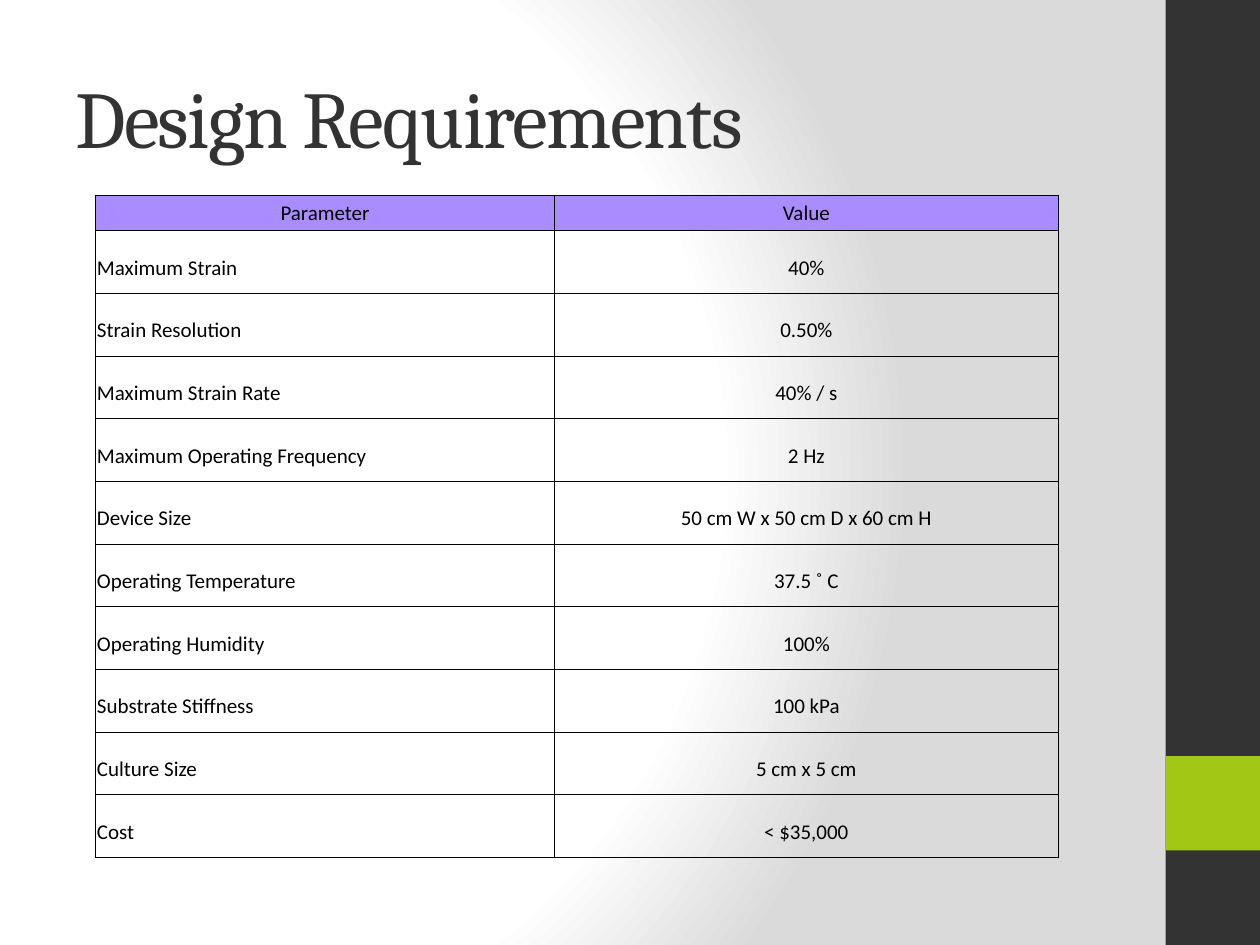
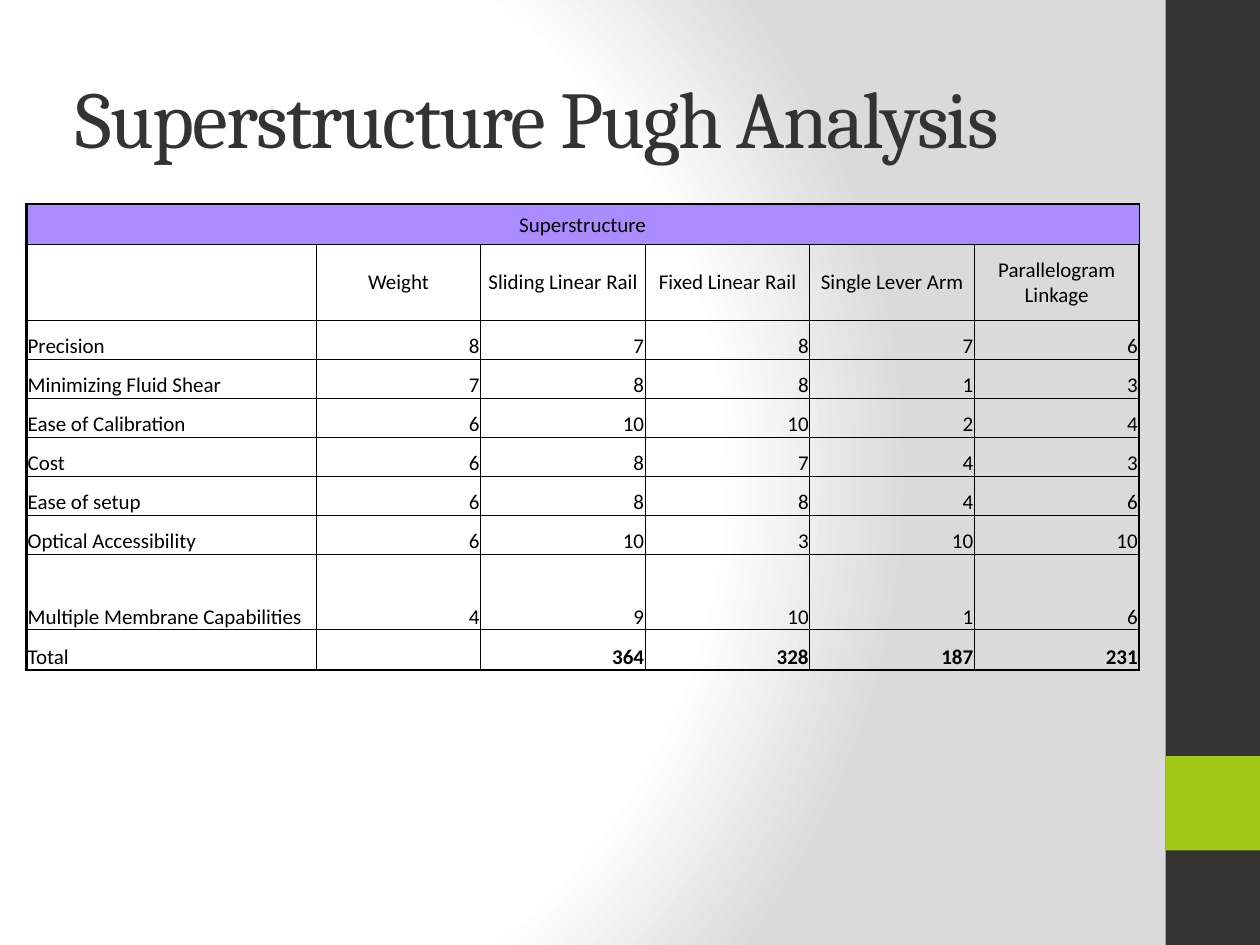
"""Build two slides: a table of design requirements and a Pugh analysis."""
from lxml import etree
from pptx import Presentation
from pptx import util as u
from pptx.dml.color import RGBColor
from pptx.enum import shapes, text
from pptx.oxml import parse_xml

DARK = RGBColor(0x33, 0x33, 0x33)
LIME = RGBColor(0xA2, 0xC8, 0x16)
LILAC = RGBColor(0xAA, 0x8C, 0xFF)
BLACK = RGBColor(0, 0, 0)
NS = "http://schemas.openxmlformats.org/drawingml/2006/main"
LEFT, MID, RIGHT = text.PP_ALIGN.LEFT, text.PP_ALIGN.CENTER, text.PP_ALIGN.RIGHT
CENTRE, BOTTOM = text.MSO_ANCHOR.MIDDLE, text.MSO_ANCHOR.BOTTOM


def put(frame, words, size=12, font="Calibri", color=BLACK, bold=False,
        align=LEFT, space=0):
    para = frame.paragraphs[0]
    para.alignment = align
    run = para.add_run()
    run.text = words
    run.font.size = u.Pt(size)
    run.font.name = font
    run.font.bold = bold
    run.font.color.rgb = color
    if space:
        run.font._element.set("spc", str(space * 100))


def grid(slide, left, top, widths, heights, edge):
    rows, cols = len(heights), len(widths)
    table = slide.shapes.add_table(
        rows, cols, u.Inches(left), u.Inches(top),
        u.Inches(sum(widths)), u.Inches(sum(heights))).table
    table.first_row = table.horz_banding = False
    for col, width in zip(table.columns, widths):
        col.width = u.Inches(width)
    for row, height in zip(table.rows, heights):
        row.height = u.Inches(height)
    for r in range(rows):
        for c in range(cols):
            cell = table.cell(r, c)
            cell.margin_left = cell.margin_right = u.Inches(0.01)
            cell.margin_top, cell.margin_bottom = u.Inches(0.01), 0
            props = cell._tc.get_or_add_tcPr()
            sides = {"L": c == 0, "R": c == cols - 1,
                     "T": r == 0, "B": r == rows - 1}
            for side, outer in sides.items():
                line = etree.SubElement(props, f"{{{NS}}}ln{side}")
                line.set("w", str(u.Pt(edge if outer else 0.5)))
                fill = etree.SubElement(line, f"{{{NS}}}solidFill")
                etree.SubElement(fill, f"{{{NS}}}srgbClr").set("val", str(BLACK))
            if r == 0:
                cell.fill.solid()
                cell.fill.fore_color.rgb = LILAC
            else:
                cell.fill.background()
    return table


deck = Presentation()
deck.slide_width, deck.slide_height = u.Inches(10), u.Inches(7.5)
master = deck.slide_master

back = master.background.fill
back.gradient()
grad = master.element.find(f".//{{{NS}}}gradFill")
stops = "".join(
    f'<a:gs pos="{pos * 1000}"><a:srgbClr val="{color}"/></a:gs>'
    for pos, color in ((0, "FFFFFF"), (75, "FFFFFF"), (100, "DADADA")))
grad.getparent().replace(grad, parse_xml(
    f'<a:gradFill xmlns:a="{NS}" rotWithShape="1"><a:gsLst>{stops}</a:gsLst>'
    '<a:path path="circle"><a:fillToRect l="20000" t="50000" r="100000" b="50000"/>'
    '</a:path></a:gradFill>'))

pages = []
for name in ("Design Requirements", "Superstructure Pugh Analysis"):
    slide = deck.slides.add_slide(deck.slide_layouts[5])
    title = slide.shapes.title
    title.left, title.top = u.Inches(0.5), u.Inches(0.3)
    title.width, title.height = u.Inches(8.33), u.Inches(1.25)
    title.text_frame.vertical_anchor = CENTRE
    put(title.text_frame, name, size=46, font="Cambria", color=DARK, space=-1)
    pages.append(slide)
needs, pugh = pages

for mark, (top, height, color) in enumerate(((0, 7.5, DARK), (6, 0.75, LIME)), 20):
    band = needs.shapes.add_shape(
        shapes.MSO_SHAPE.RECTANGLE, u.Inches(9.25), u.Inches(top),
        u.Inches(0.75), u.Inches(height))
    band.shadow.inherit = False
    band.fill.solid()
    band.fill.fore_color.rgb = color
    band.line.fill.background()
    band.element.nvSpPr.cNvPr.id = mark
    master.shapes.element.append(band.element)

specs = [
    ("Parameter", "Value"),
    ("Maximum Strain", "40%"),
    ("Strain Resolution", "0.50%"),
    ("Maximum Strain Rate", "40% / s"),
    ("Maximum Operating Frequency", "2 Hz"),
    ("Device Size", "50 cm W x 50 cm D x 60 cm H"),
    ("Operating Temperature", "37.5 ˚ C"),
    ("Operating Humidity", "100%"),
    ("Substrate Stiffness", "100 kPa"),
    ("Culture Size", "5 cm x 5 cm"),
    ("Cost", "< $35,000"),
]
table = grid(needs, 0.76, 1.55, [3.64, 4], [0.28] + [4.98 / 10] * 10, edge=1)
for r, row in enumerate(specs):
    for c, words in enumerate(row):
        cell = table.cell(r, c)
        cell.vertical_anchor = BOTTOM if r else CENTRE
        if r:
            cell.margin_top = cell.margin_bottom = u.Inches(0.1)
        put(cell.text_frame, words, align=LEFT if r and c == 0 else MID)

heads = ("", "Weight", "Sliding Linear Rail", "Fixed Linear Rail",
         "Single Lever Arm", "Parallelogram Linkage")
scores = [
    ("Precision", 8, 7, 8, 7, 6),
    ("Minimizing Fluid Shear", 7, 8, 8, 1, 3),
    ("Ease of Calibration", 6, 10, 10, 2, 4),
    ("Cost", 6, 8, 7, 4, 3),
    ("Ease of setup", 6, 8, 8, 4, 6),
    ("Optical Accessibility", 6, 10, 3, 10, 10),
    ("Multiple Membrane Capabilities", 4, 9, 10, 1, 6),
]
sums = [sum(row[1] * row[c] for row in scores) for c in range(2, 6)]
lines = [heads, *scores, ("Total", "", *sums)]
table = grid(pugh, 0.21, 1.62, [2.3] + [6.53 / 5] * 5,
             [0.32, 0.6] + [0.31] * 6 + [0.6, 0.32], edge=1.5)
banner = table.cell(0, 0)
banner.merge(table.cell(0, 5))
banner.vertical_anchor = CENTRE
put(banner.text_frame, "Superstructure", align=MID)
for r, row in enumerate(lines, 1):
    for c, value in enumerate(row):
        if value == "":
            continue
        cell = table.cell(r, c)
        cell.vertical_anchor = CENTRE if r == 1 else BOTTOM
        align = MID if r == 1 else RIGHT if c else LEFT
        put(cell.text_frame, str(value), align=align,
            bold=r == len(lines) and c > 1)

deck.save("out.pptx")
